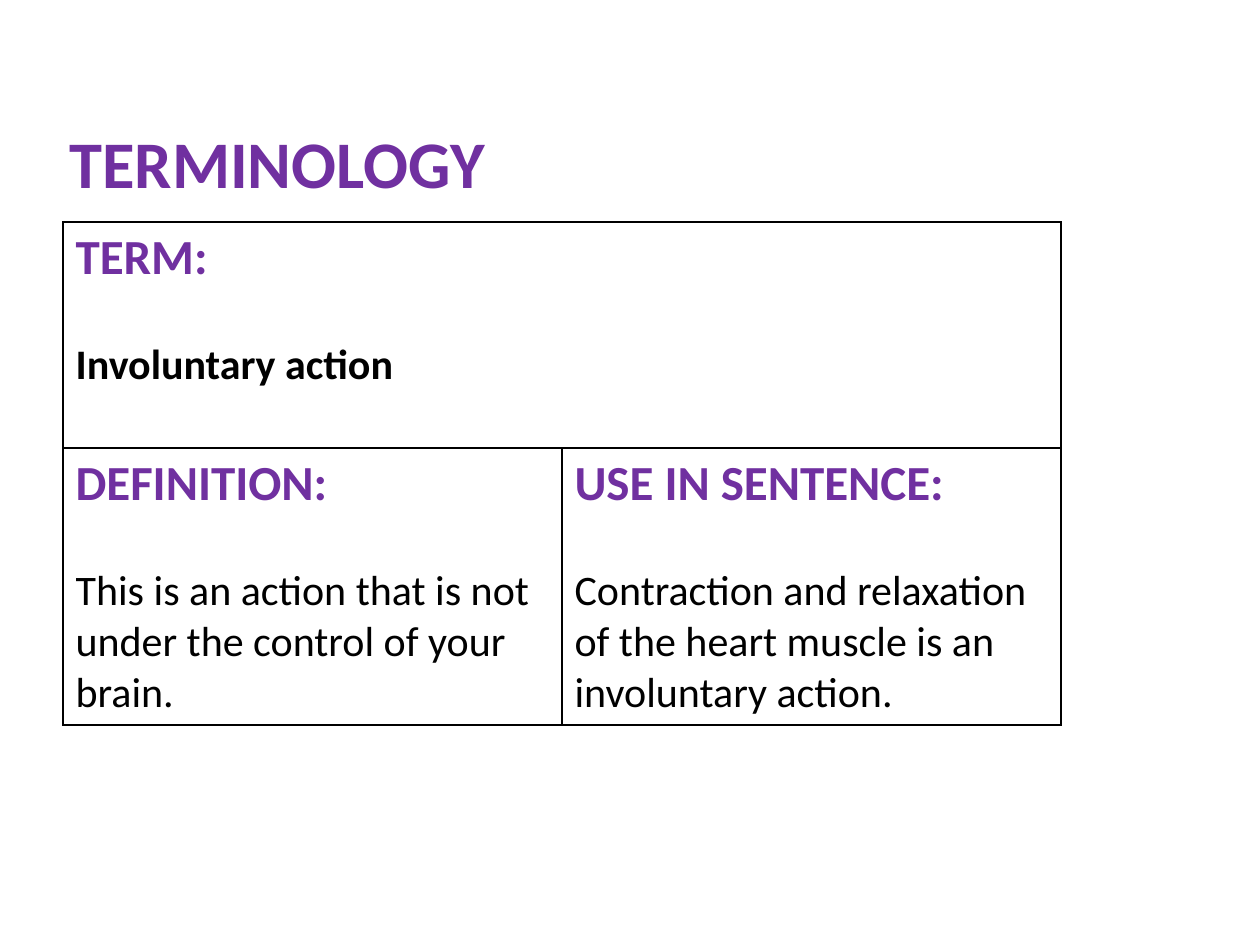
"""Build a terminology slide with a term, its definition and a sample sentence."""
from lxml import etree
from pptx import Presentation
from pptx import util as u
from pptx.dml.color import RGBColor
from pptx.enum import text
from pptx.oxml import ns

COLORS = {"heading": "7030A0", "body": "000000", "border": "000000"}
FONT = "Calibri"
LEFT, WIDTH = 36, 570.24
ROW_HEIGHTS = (129.2, 158.4)
BLANK_LINE = 29.3


def style_font(paragraph, size, color, bold):
    """Set the font of a whole paragraph."""
    font = paragraph.font
    font.name, font.size, font.bold = FONT, u.Pt(size), bold
    font.color.rgb = RGBColor.from_string(COLORS[color])


def add_title(slide, wording):
    """Add the bottom-anchored slide heading."""
    title = slide.shapes.add_textbox(u.Pt(LEFT), u.Pt(25.2), u.Pt(WIDTH), u.Pt(90))
    frame = title.text_frame
    frame.word_wrap = True
    frame.vertical_anchor = text.MSO_ANCHOR.BOTTOM
    frame.margin_left = frame.margin_right = u.Pt(3.6)
    frame.margin_top = frame.margin_bottom = 0
    frame.text = wording
    style_font(frame.paragraphs[0], 38, "heading", True)


def outline_cell(cell):
    """Give a cell thin borders on all sides and no fill."""
    properties = cell._tc.get_or_add_tcPr()
    for side in ("lnL", "lnR", "lnT", "lnB"):
        line = etree.SubElement(properties, ns.qn(f"a:{side}"), w=str(u.Pt(1)))
        fill = etree.SubElement(line, ns.qn("a:solidFill"))
        etree.SubElement(fill, ns.qn("a:srgbClr"), val=COLORS["border"])
    cell.fill.background()


def fill_cell(cell, label, content, bold=False):
    """Write a coloured label with its content one line below."""
    frame = cell.text_frame
    frame.text = label
    style_font(frame.paragraphs[0], 28, "heading", True)
    body = frame.add_paragraph()
    body.text = content
    body.space_before = u.Pt(BLANK_LINE)
    style_font(body, 24, "body", bold)


def add_term_table(slide):
    """Add the table with the term on top and its two explanations below."""
    table = slide.shapes.add_table(
        2, 2, u.Pt(LEFT), u.Pt(126.8), u.Pt(WIDTH), u.Pt(sum(ROW_HEIGHTS))
    ).table
    table.first_row = table.horz_banding = False
    for row, height in zip(table.rows, ROW_HEIGHTS):
        row.height = u.Pt(height)
    for cell in table.iter_cells():
        outline_cell(cell)
    term, definition, sentence = table.cell(0, 0), table.cell(1, 0), table.cell(1, 1)
    term.merge(table.cell(0, 1))
    fill_cell(term, "TERM:", "Involuntary action", bold=True)
    fill_cell(definition, "DEFINITION:",
              "This is an action that is not under the control of your brain.")
    fill_cell(sentence, "USE IN SENTENCE:",
              "Contraction and relaxation of the heart muscle is an involuntary action.")


def main():
    """Build and save the slide."""
    deck = Presentation()
    deck.slide_width, deck.slide_height = u.Pt(720), u.Pt(540)
    slide = deck.slides.add_slide(deck.slide_layouts[6])
    add_title(slide, "TERMINOLOGY")
    add_term_table(slide)
    deck.save("out.pptx")


if __name__ == "__main__":
    main()
